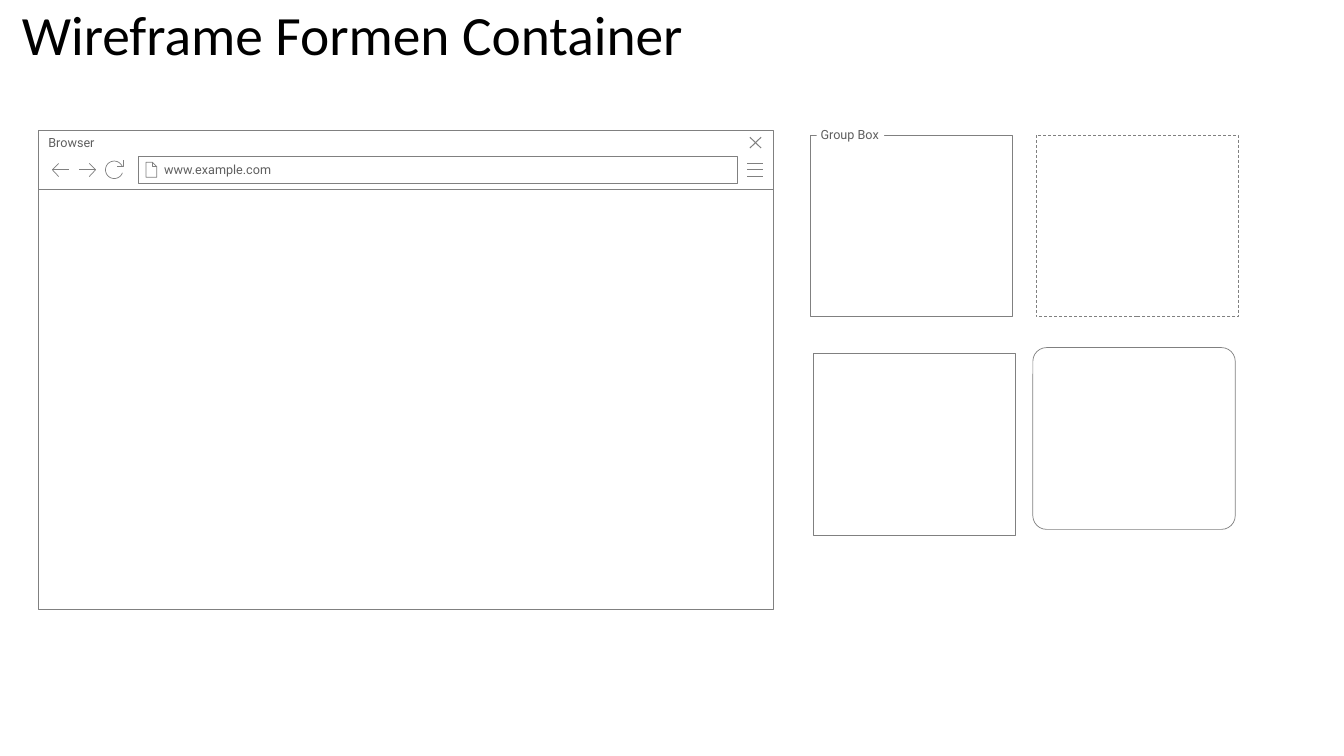
import math

from pptx import Presentation
from pptx import util as u
from pptx.dml.color import RGBColor
from pptx.enum import dml, shapes, text

COLOR = {"paper": "FFFFFF", "line": "808080", "label": "5F5F5F", "title": "000000"}
KIND = shapes.MSO_SHAPE
MIDDLE = text.MSO_ANCHOR.MIDDLE
TOP = text.MSO_ANCHOR.TOP


def tint(name):
    return RGBColor.from_string(COLOR[name])


def apply(target, values):
    for name, value in values.items():
        setattr(target, name, value)


def stroke(shape, width=0.5, dash=None):
    shape.shadow.inherit = False
    shape.line.color.rgb = tint("line")
    apply(shape.line, {"width": u.Pt(width), "dash_style": dash})


def panel(parent, box, kind=KIND.RECTANGLE, dash=None):
    shape = parent.add_shape(kind, *map(u.Cm, box))
    shape.fill.solid()
    shape.fill.fore_color.rgb = tint("paper")
    stroke(shape, dash=dash)
    return shape


def label(shape, words, pads, anchor=TOP, wrap=True, size=9, face="Roboto", color="label"):
    frame = shape.text_frame
    sides = ("margin_left", "margin_top", "margin_right", "margin_bottom")
    apply(frame, dict(zip(sides, map(u.Cm, pads))))
    apply(frame, {"vertical_anchor": anchor, "word_wrap": wrap})
    line = frame.paragraphs[0]
    line.alignment = text.PP_ALIGN.LEFT
    run = line.add_run()
    run.text = words
    apply(run.font, {"size": u.Pt(size), "name": face})
    run.font.color.rgb = tint(color)
    return line


def icon(parent, box, strokes, width=0.5):
    left, top = box[:2]
    paths = [[(u.Cm(left + x), u.Cm(top + y)) for x, y in path] for path in strokes]
    pen = parent.build_freeform(*paths[0][0])
    for index, path in enumerate(paths):
        if index:
            pen.move_to(*path[0])
        pen.add_line_segments(path[1:], close=False)
    shape = pen.convert_to_shape()
    shape.fill.background()
    stroke(shape, width)


def arrow(tail, tip):
    neck = tip + math.copysign(0.16, tail - tip)
    return [[(neck, 0.84), (tip, 1.0), (neck, 1.17)], [(tip, 1.0), (tail, 1.0)]]


def reload(x, y, size):
    turns = [math.radians(angle) for angle in range(20, 341, 10)]
    ring = [(x + size * math.cos(a), y + size * math.sin(a)) for a in turns]
    return [[(2.13, 0.76), (2.13, 0.92), (1.98, 0.92)], ring]


def header(slide, box):
    shape = slide.shapes.add_textbox(*map(u.Cm, box))
    line = label(shape, "Wireframe Formen Container", (0.25, 0.13, 0.25, 0.13),
                 MIDDLE, size=39.6, face="Calibri", color="title")
    line.line_spacing = 0.9


def browser(slide, box):
    left, top, width, height = box
    bar = 1.49
    group = slide.shapes.add_group_shape().shapes
    panel(group, (left, top + bar, width, height - bar))
    label(panel(group, (left, top, width, bar)), "Browser", (0.25, 0.13, 0.64, 0.13))
    icon(group, box, [[(17.86, y), (18.27, y)] for y in (1.17, 1.0, 0.84)])
    icon(group, box, [[(18.21, 0.18), (17.93, 0.45)], [(17.93, 0.18), (18.21, 0.45)]], 0.75)
    field = panel(group, (left + 2.51, top + 0.66, 15.11, 0.67))
    label(field, "www.example.com", (0.66, 0.13, 0.25, 0.13), MIDDLE)
    page = [[(2.87, 0.81), (2.87, 0.92), (2.98, 0.92)],
            [(2.71, 0.81), (2.71, 1.19), (2.98, 1.19), (2.98, 0.92), (2.87, 0.81), (2.71, 0.81)]]
    for strokes in (page, arrow(0.78, 0.35), arrow(1.01, 1.44), reload(1.91, 1.0, 0.22)):
        icon(group, box, strokes)


def group_box(slide, box):
    group = slide.shapes.add_group_shape().shapes
    panel(group, box)
    tag = panel(group, (box[0] + 0.16, box[1] - 0.22, 1.7, 0.43))
    tag.line.fill.background()
    label(tag, "Group Box", (0.1, 0.03, 0.1, 0.03), wrap=False)


def round_box(slide, box):
    shape = panel(slide.shapes, box, KIND.ROUNDED_RECTANGLE)
    shape.adjustments[0] = 0.075


def main():
    deck = Presentation()
    apply(deck, {"slide_width": u.Cm(33.87), "slide_height": u.Cm(19.05)})
    slide = deck.slides.add_slide(deck.slide_layouts[6])
    size = (5.1, 4.58)
    header(slide, (0.3, 0.05, 29.21, 1.78))
    browser(slide, (0.97, 3.28, 18.52, 12.07))
    group_box(slide, (20.42, 3.4, *size))
    panel(slide.shapes, (20.5, 8.9, *size))
    panel(slide.shapes, (26.11, 3.4, *size), dash=dml.MSO_LINE.DASH)
    round_box(slide, (26.03, 8.76, *size))
    deck.save("out.pptx")


if __name__ == "__main__":
    main()
